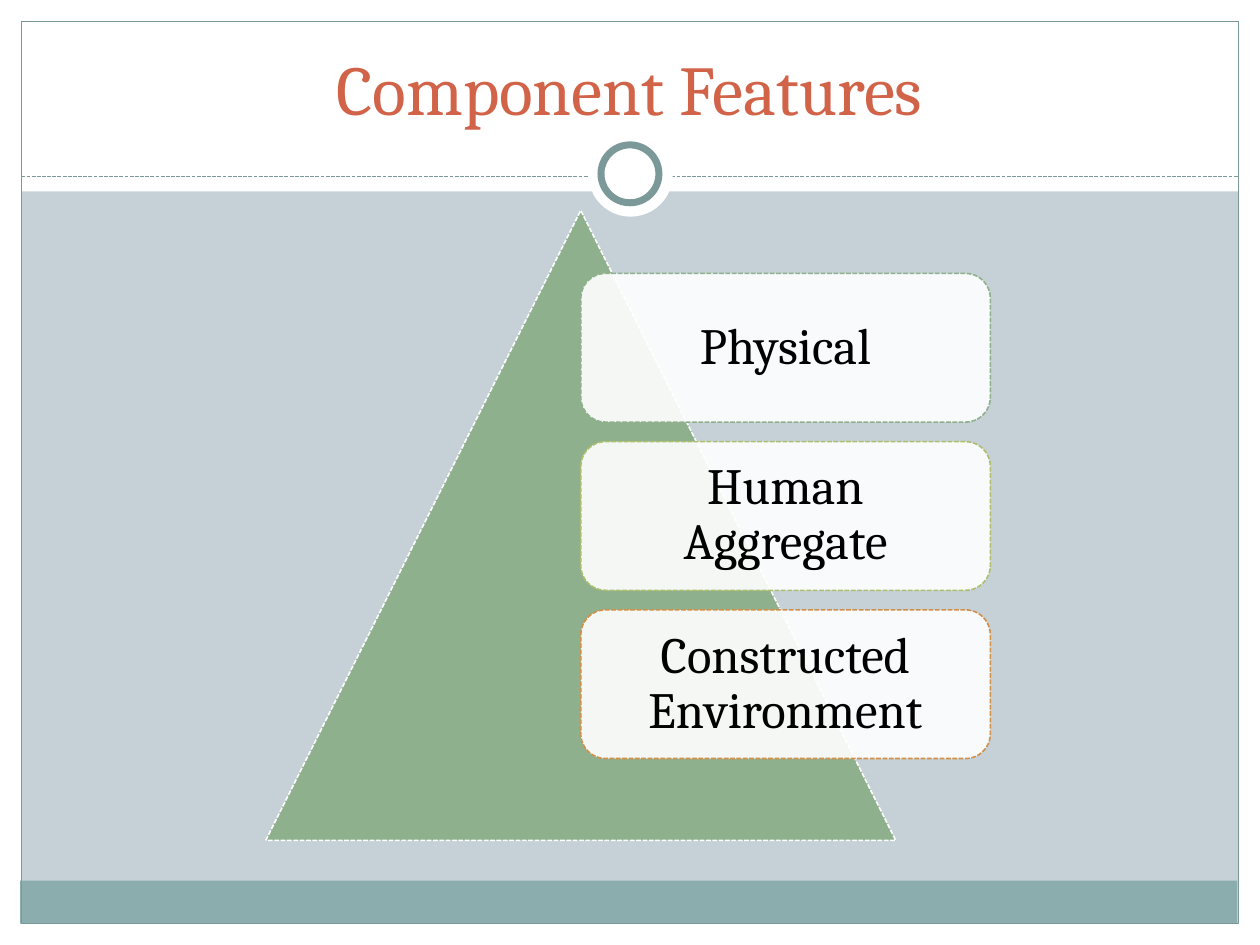
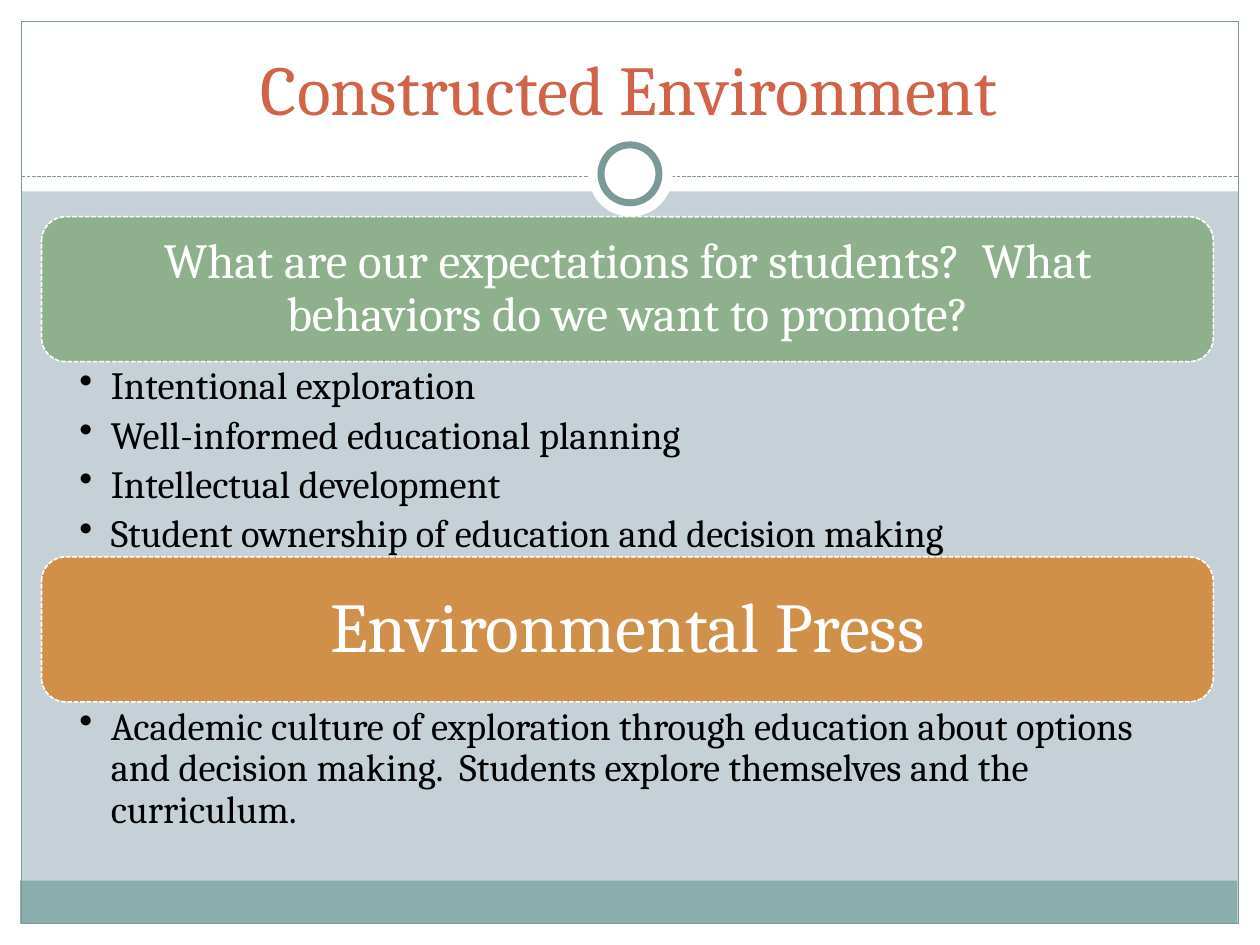
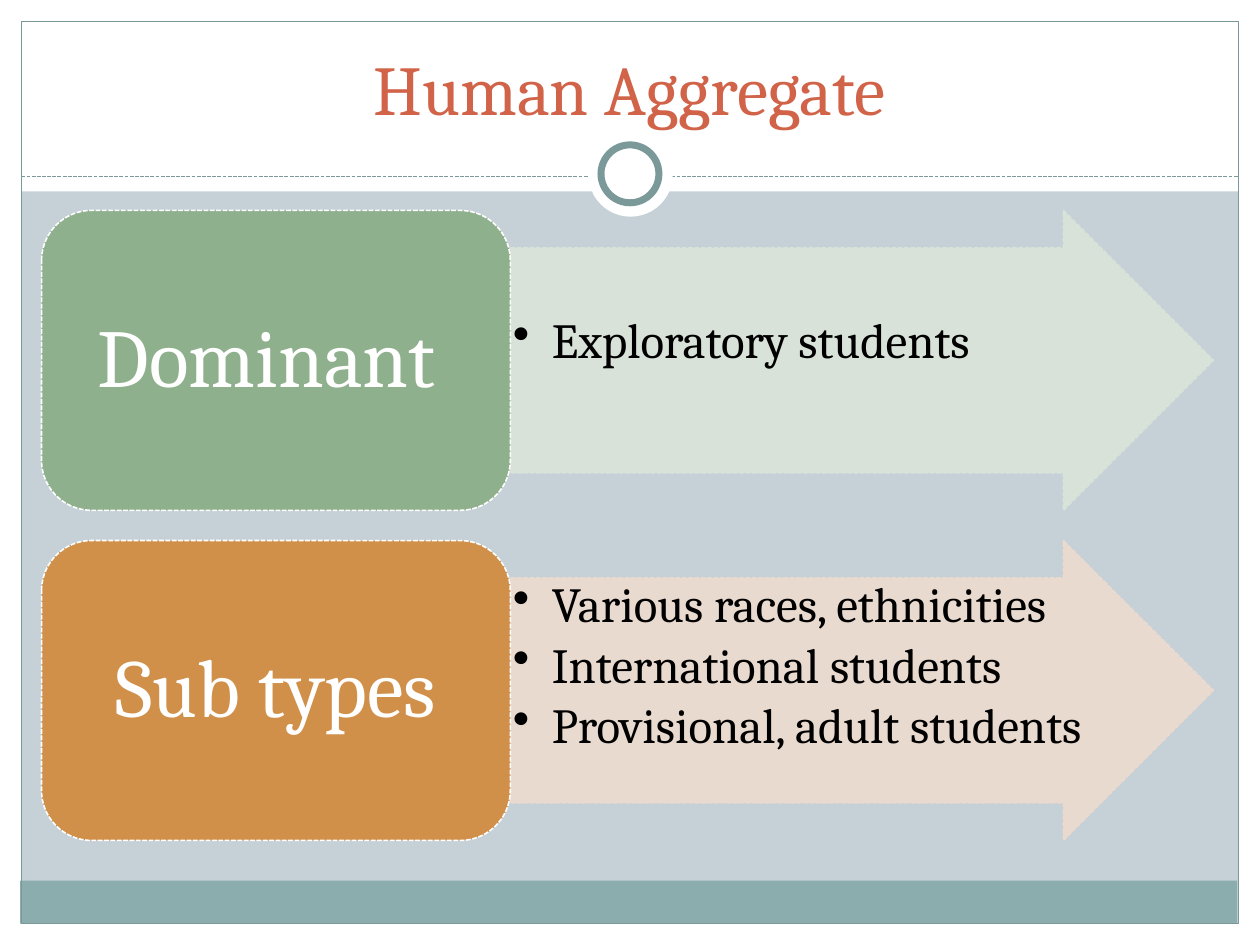
from dataclasses import dataclass

from lxml import etree
from pptx import Presentation
from pptx.dml.color import RGBColor
from pptx.enum.dml import MSO_LINE
from pptx.enum.shapes import MSO_CONNECTOR, MSO_SHAPE
from pptx.enum.text import MSO_ANCHOR, PP_ALIGN
from pptx.oxml.ns import qn
from pptx.util import Inches, Pt

RECT = MSO_SHAPE.RECTANGLE
ROUNDED = MSO_SHAPE.ROUNDED_RECTANGLE
OVAL = MSO_SHAPE.OVAL
TRIANGLE = MSO_SHAPE.ISOSCELES_TRIANGLE
ARROW = MSO_SHAPE.RIGHT_ARROW
STRAIGHT = MSO_CONNECTOR.STRAIGHT
DASH = MSO_LINE.SQUARE_DOT
TOP, MIDDLE, BOTTOM = MSO_ANCHOR.TOP, MSO_ANCHOR.MIDDLE, MSO_ANCHOR.BOTTOM
LEFT, CENTER = PP_ALIGN.LEFT, PP_ALIGN.CENTER

FONT = "Cambria"
COLORS = {
    "background": "C5D1D7",
    "white": "FFFFFF",
    "black": "000000",
    "footer": "8CADAE",
    "frame": "7C999A",
    "title": "D16349",
    "green": "8FB08C",
    "lime": "ADBF6C",
    "orange": "D19049",
    "pale_green": "DBE4DA",
    "pale_orange": "EEDBCF",
}
DIAGRAM_LINE = 0.9
OPACITY = 90
CONTENT_LEFT, CONTENT_WIDTH = 0.33, 9.3


@dataclass(frozen=True)
class Box:
    left: float
    top: float
    width: float
    height: float

    def inches(self) -> tuple:
        return tuple(map(Inches, (self.left, self.top, self.width, self.height)))


@dataclass(frozen=True)
class Section:
    heading: str
    size: int
    inset: float
    color: str
    top: float
    body_height: float
    bullets: tuple


@dataclass(frozen=True)
class Category:
    heading: str
    color: str
    arrow_color: str
    top_inset: float
    bullets: tuple


FRAME_PARTS = (
    (RECT, Box(0, 7.33, 10, 0.17), "white", None, 0),
    (RECT, Box(0, 0, 10, 1.52), "white", None, 0),
    (RECT, Box(0, 0, 0.17, 7.5), "white", None, 0),
    (RECT, Box(9.83, 0, 0.17, 7.5), "white", None, 0),
    (RECT, Box(0.16, 6.99, 9.66, 0.34), "footer", None, 0),
    (RECT, Box(0.17, 0.17, 9.66, 7.16), None, "frame", 0.75),
)
RING_PARTS = (
    (OVAL, Box(4.67, 1.05, 0.67, 0.67), "white", None, 0),
    (OVAL, Box(4.77, 1.15, 0.46, 0.46), "white", "frame", 4),
)
FEATURES = (
    ("Physical", "green"),
    ("Human Aggregate", "lime"),
    ("Constructed Environment", "orange"),
)
SECTIONS = (
    Section(
        "What are our expectations for students?  What behaviors do we want to promote?",
        28, 0.12, "green", 1.72, 1.55,
        (
            "Intentional exploration",
            "Well-informed educational planning",
            "Intellectual development",
            "Student ownership of education and decision making",
        ),
    ),
    Section(
        "Environmental Press", 40, 0.17, "orange", 4.42, 1.05,
        (
            "Academic culture of exploration through education about options "
            "and decision making.  Students explore themselves and the curriculum.",
        ),
    ),
)
CATEGORIES = (
    Category("Dominant ", "green", "pale_green", 0.54, ("Exploratory students",)),
    Category(
        "Sub types", "orange", "pale_orange", 0.02,
        (
            "Various races, ethnicities",
            "International students",
            "Provisional, adult students",
        ),
    ),
)


def rgb(name: str) -> RGBColor:
    return RGBColor.from_string(COLORS[name])


def set_opacity(parent) -> None:
    color = parent.find(qn("a:solidFill"))[0]
    etree.SubElement(color, qn("a:alpha"), val=str(OPACITY * 1000))


def style_line(line, color: str, width: float, dashed: bool) -> None:
    line.color.rgb = rgb(color)
    line.width = Pt(width)
    if dashed:
        line.dash_style = DASH


def add_shape(s, kind, box: Box, fill=None, line=None, width=DIAGRAM_LINE, dashed=False):
    shape = s.shapes.add_shape(kind, *box.inches())
    shape.shadow.inherit = False
    if fill:
        shape.fill.solid()
        shape.fill.fore_color.rgb = rgb(fill)
    else:
        shape.fill.background()
    if line:
        style_line(shape.line, line, width, dashed)
    else:
        shape.line.fill.background()
    return shape


def set_frame(tf, insets: tuple, anchor) -> None:
    tf.word_wrap = True
    tf.vertical_anchor = anchor
    tf.margin_left, tf.margin_top, tf.margin_right, tf.margin_bottom = map(Inches, insets)


def format_paragraph(p, size: int, color: str, align) -> None:
    p.alignment = align
    for r in p.runs:
        r.font.name = FONT
        r.font.size = Pt(size)
        r.font.color.rgb = rgb(color)


def write_label(shape, text: str, size: int, color: str, insets: tuple) -> None:
    tf = shape.text_frame
    set_frame(tf, insets, MIDDLE)
    tf.text = text
    p = tf.paragraphs[0]
    p.line_spacing = 0.9
    format_paragraph(p, size, color, CENTER)


def write_bullets(shape, lines: tuple, size: int, indent: float, gap: float, insets: tuple) -> None:
    tf = shape.text_frame
    set_frame(tf, insets, TOP)
    tf.text = "\n".join(lines)
    for p in tf.paragraphs:
        format_paragraph(p, size, "black", LEFT)
        p.line_spacing = 0.9
        p.space_after = Pt(size * gap)
        pPr = p._p.get_or_add_pPr()
        pPr.set("marL", str(Inches(indent)))
        pPr.set("indent", str(-Inches(indent)))
        etree.SubElement(pPr, qn("a:buChar"), char="•")


def add_divider(s):
    line = s.shapes.add_connector(
        STRAIGHT, Inches(0.17), Inches(1.4), Inches(9.83), Inches(1.4))
    style_line(line.line, "frame", 0.75, True)
    etree.SubElement(line.element.spPr, qn("a:effectLst"))
    return line


def build_layout(layout, s) -> None:
    layout.background.fill.solid()
    layout.background.fill.fore_color.rgb = rgb("background")
    tree = layout.shapes.element
    for placeholder in list(layout.placeholders)[1:]:
        tree.remove(placeholder.element)
    parts = [add_shape(s, *part) for part in FRAME_PARTS]
    parts.append(add_divider(s))
    parts += [add_shape(s, *part) for part in RING_PARTS]
    for position, part in enumerate(parts, start=2):
        tree.insert(position, part.element)


def write_title(s, text: str) -> None:
    title = s.shapes.title
    title.left, title.top, title.width, title.height = Box(0.33, 0.25, 9.33, 0.83).inches()
    tf = title.text_frame
    set_frame(tf, (0.1, 0.05, 0.1, 0.05), BOTTOM)
    tf.text = text
    format_paragraph(tf.paragraphs[0], 40, "title", CENTER)


def draw_features(s) -> None:
    add_shape(s, TRIANGLE, Box(2.11, 1.67, 5, 5), "green", "white", dashed=True)
    for i, (text, color) in enumerate(FEATURES):
        box = Box(4.61, 2.17 + i * 1.335, 3.25, 1.18)
        card = add_shape(s, ROUNDED, box, "white", color, dashed=True)
        set_opacity(card.element.spPr)
        write_label(card, text, 29, "black", (0.12,) * 4)


def draw_environment(s) -> None:
    header_height = 1.15
    for section in SECTIONS:
        box = Box(CONTENT_LEFT, section.top, CONTENT_WIDTH, header_height)
        header = add_shape(s, ROUNDED, box, section.color, "white", dashed=True)
        write_label(header, section.heading, section.size, "white", (section.inset,) * 4)
        body = Box(CONTENT_LEFT, section.top + header_height, CONTENT_WIDTH, section.body_height)
        tb = s.shapes.add_textbox(*body.inches())
        write_bullets(tb, section.bullets, 22, 0.25, 0.2, (0.3, 0.04, 0.22, 0.04))


def draw_aggregate(s) -> None:
    height, label_width = 2.38, 3.72
    for i, category in enumerate(CATEGORIES):
        top = 1.67 + i * 2.62
        box = Box(CONTENT_LEFT + label_width, top, CONTENT_WIDTH - label_width, height)
        arrow = add_shape(s, ARROW, box, category.arrow_color, category.arrow_color, dashed=True)
        arrow.adjustments[0], arrow.adjustments[1] = 0.75, 0.5
        spPr = arrow.element.spPr
        set_opacity(spPr)
        set_opacity(spPr.find(qn("a:ln")))
        insets = (0.02, category.top_inset, 0.02, 0.02)
        write_bullets(arrow, category.bullets, 28, 0.31, 0.15, insets)
        box = Box(CONTENT_LEFT, top, label_width, height)
        label = add_shape(s, ROUNDED, box, category.color, "white", dashed=True)
        write_label(label, category.heading, 47, "white", (0.2, 0.1, 0.2, 0.1))


def main() -> None:
    prs = Presentation()
    prs.slide_width, prs.slide_height = Inches(10), Inches(7.5)
    layout = prs.slide_layouts[5]
    pages = (
        ("Component Features", draw_features),
        ("Constructed Environment", draw_environment),
        ("Human Aggregate", draw_aggregate),
    )
    slides = [prs.slides.add_slide(layout) for _ in pages]
    build_layout(layout, slides[0])
    for s, (title, draw) in zip(slides, pages):
        write_title(s, title)
        draw(s)
    prs.save("out.pptx")


if __name__ == "__main__":
    main()
